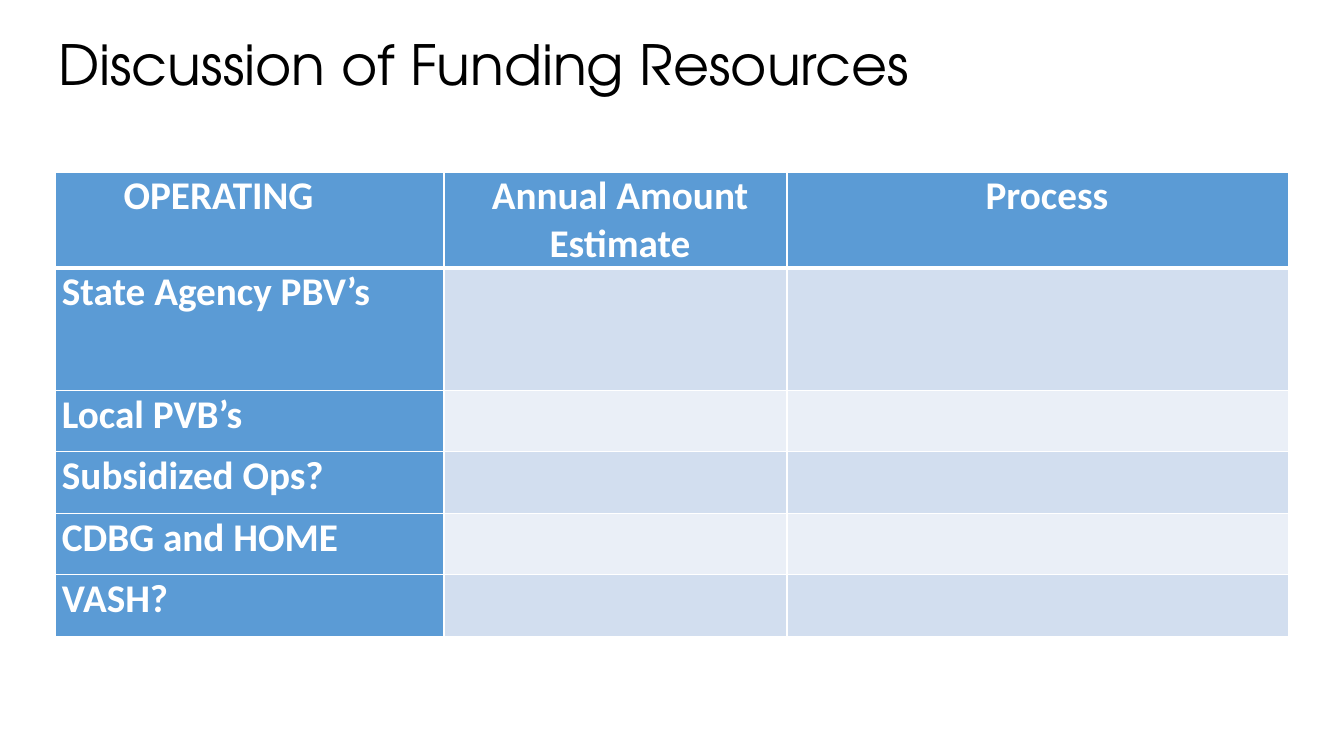
from lxml import etree
from pptx import Presentation
from pptx import util as u
from pptx.dml.color import RGBColor
from pptx.enum import text
from pptx.oxml.ns import qn

PX = 914400 / 100.8
BLUE, BAND, PALE, WHITE, BLACK = "5B9BD5", "D2DEEF", "EAEFF7", "FFFFFF", "000000"
COLS = [389, 343, 502]
ROWS = [94, 123] + [61, 62] * 2
HEADERS = [("OPERATING", 7, 69), ("Annual Amount Estimate", 16, 7), ("Process", 25, 7)]
SOURCES = ["State Agency PBV’s", "Local PVB’s", "Subsidized Ops?", "CDBG and HOME", "VASH?"]


def px(n):
    return u.Emu(round(n * PX))


def color(value):
    return RGBColor.from_string(value)


def set_attrs(obj, values):
    for name, value in values.items():
        setattr(obj, name, value)


def write(tf, words, size, font, fill, align, bold=False):
    p = tf.paragraphs[0]
    p.alignment = align
    r = p.add_run()
    r.text = words
    set_attrs(r.font, {"size": u.Pt(size), "name": font, "bold": bold})
    r.font.color.rgb = color(fill)
    return p


def add_borders(cell, widths):
    tc_pr = cell._tc.get_or_add_tcPr()
    for side, width in widths.items():
        ln = etree.SubElement(tc_pr, qn("a:ln" + side), w=str(u.Pt(width)))
        fill = etree.SubElement(ln, qn("a:solidFill"))
        etree.SubElement(fill, qn("a:srgbClr"), val=WHITE)


def add_title(s, x, y, w, h):
    sp = s.shapes.title
    set_attrs(sp, {"left": px(x), "top": px(y), "width": px(w), "height": px(h)})
    tf = sp.text_frame
    set_attrs(tf, {"word_wrap": True, "auto_size": text.MSO_AUTO_SIZE.NONE,
                   "vertical_anchor": text.MSO_ANCHOR.MIDDLE})
    p = write(tf, "Discussion of Funding Resources", 39.6, "TeX Gyre Adventor",
              BLACK, text.PP_ALIGN.LEFT)
    p.line_spacing = 0.9


def format_cell(cell, row, fill, words="", left=7, right=7):
    add_borders(cell, {"L": 1, "R": 1, "T": 3 if row == 1 else 1, "B": 3 if row == 0 else 1})
    cell.fill.solid()
    cell.fill.fore_color.rgb = color(fill)
    set_attrs(cell, {"margin_left": px(left), "margin_right": px(right),
                     "margin_top": 0, "margin_bottom": 0})
    if words:
        align = text.PP_ALIGN.LEFT if row else text.PP_ALIGN.CENTER
        write(cell.text_frame, words, 28, "Calibri", WHITE, align, bold=True)


def add_funding_table(s, x, y, w, h):
    table = s.shapes.add_table(len(ROWS), len(COLS), px(x), px(y), px(w), px(h)).table
    for column, width in zip(table.columns, COLS):
        column.width = px(width)
    for row, height in zip(table.rows, ROWS):
        row.height = px(height)
    for j, (words, left, right) in enumerate(HEADERS):
        format_cell(table.cell(0, j), 0, BLUE, words, left, right)
    for i, source in enumerate(SOURCES, 1):
        format_cell(table.cell(i, 0), i, BLUE, source)
        for j in range(1, len(COLS)):
            format_cell(table.cell(i, j), i, BAND if i % 2 else PALE)


def main():
    prs = Presentation()
    set_attrs(prs, {"slide_width": px(1344), "slide_height": px(756)})
    s = prs.slides.add_slide(prs.slide_layouts[5])
    add_title(s, 48, 43, 1159, 49)
    add_funding_table(s, 55, 172, sum(COLS), sum(ROWS))
    prs.save("out.pptx")


if __name__ == "__main__":
    main()
